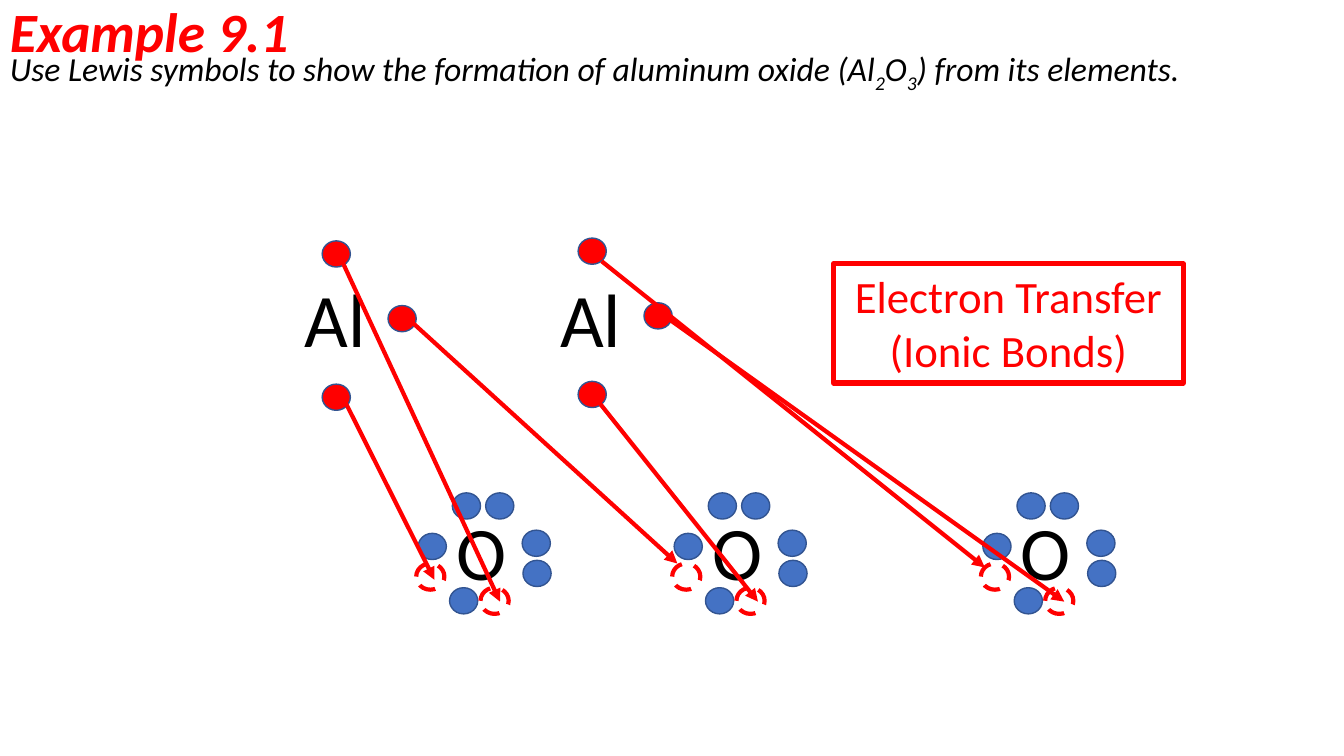
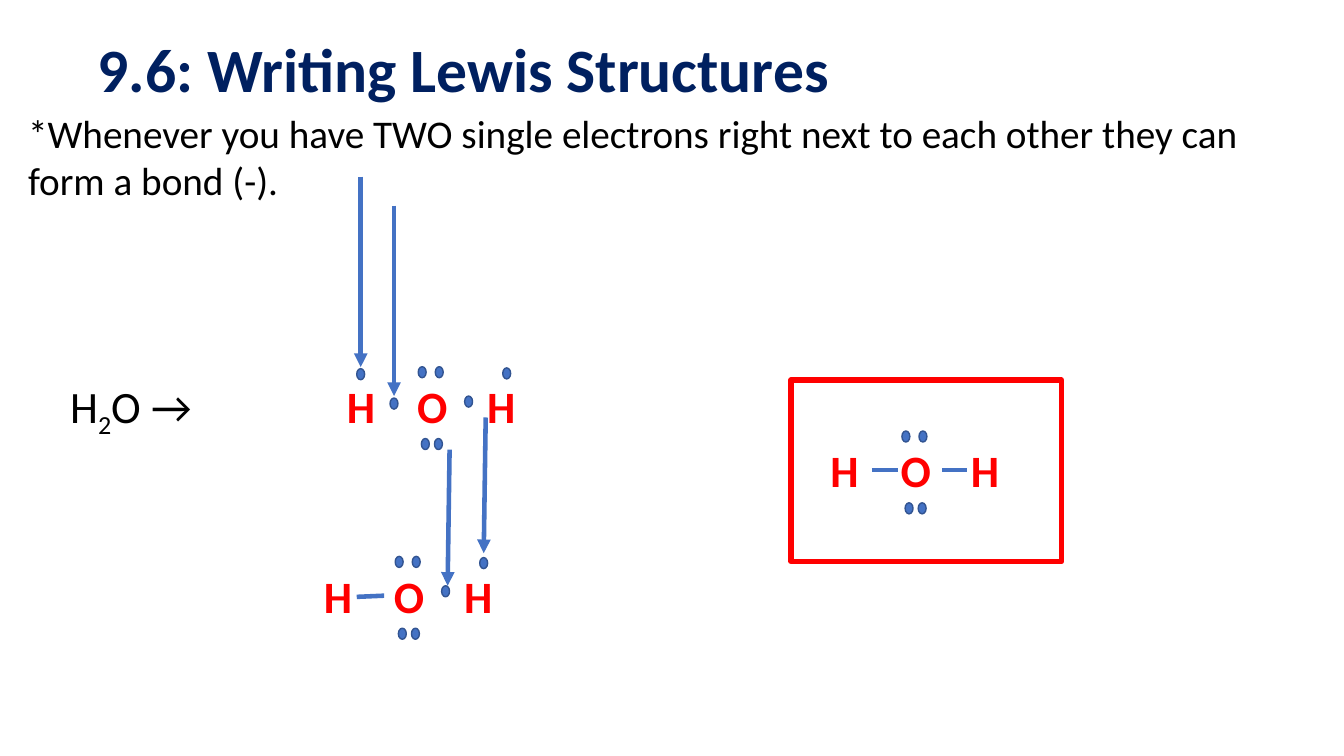
from typing import NamedTuple

from pptx import Presentation
from pptx.dml.color import RGBColor
from pptx.enum.dml import MSO_LINE as Dash
from pptx.enum.shapes import MSO_CONNECTOR as Link, MSO_SHAPE as Form
from pptx.enum.text import MSO_ANCHOR as Anchor, MSO_AUTO_SIZE as Fit, PP_ALIGN as Align
from pptx.oxml.ns import qn
from pptx.util import Cm, Pt

# Shared look
RED, BLUE, EDGE, NAVY, BLACK = "FF0000", "4472C4", "325491", "002060", "000000"
FACE = "Calibri"


class Box(NamedTuple):
    x: float
    y: float
    w: float
    h: float


class Style(NamedTuple):
    size: float
    hue: str = BLACK
    bold: bool = False
    slant: bool = False


class Spot(NamedTuple):
    x: float
    y: float


class Arrow(NamedTuple):
    start: Spot
    end: Spot


def paint(hue: str) -> RGBColor:
    return RGBColor.from_string(hue)


def place(box: Box) -> list:
    return [Cm(side) for side in box]


# Text: line feeds part paragraphs, underscores enclose subscripts
def fill_text(frame, text: str, style: Style, **layout) -> None:
    frame.word_wrap = True
    frame.auto_size = Fit.SHAPE_TO_FIT_TEXT
    form = {"name": FACE, "size": Pt(style.size), "bold": style.bold, "italic": style.slant}
    for row, line in enumerate(text.split("\n")):
        par = frame.paragraphs[0] if row == 0 else frame.add_paragraph()
        for key, value in layout.items():
            setattr(par, key, value)
        for part, words in enumerate(line.split("_")):
            run = par.add_run()
            run.text = words
            for key, value in form.items():
                setattr(run.font, key, value)
            run.font.color.rgb = paint(style.hue)
            if part % 2:
                run._r.get_or_add_rPr().set("baseline", "-25000")


def write(slide, box: Box, text: str, style: Style, **layout):
    frame = slide.shapes.add_textbox(*place(box)).text_frame
    fill_text(frame, text, style, **layout)
    return frame


def add_title(slide, box: Box, text: str, style: Style) -> None:
    frame = write(slide, box, text, style, line_spacing=0.9)
    frame.auto_size = Fit.NONE
    frame.vertical_anchor = Anchor.MIDDLE


# Shapes and lines
def draw(slide, form, box: Box, fill: str | None, edge: str, width: float, dash=None):
    shape = slide.shapes.add_shape(form, *place(box))
    shape.shadow.inherit = False
    if fill:
        shape.fill.solid()
        shape.fill.fore_color.rgb = paint(fill)
    else:
        shape.fill.background()
    shape.line.color.rgb = paint(edge)
    for key, value in {"width": Pt(width), "dash_style": dash}.items():
        setattr(shape.line, key, value)
    return shape


def add_dots(slide, base: Spot, spots: list[Spot], w: float, h: float, fill: str = BLUE) -> None:
    for spot in spots:
        box = Box(base.x + spot.x, base.y + spot.y, w, h)
        draw(slide, Form.OVAL, box, fill, EDGE, 1)


def add_lines(slide, lines: list[Arrow], hue: str, width: float, head: bool = True) -> None:
    for (start, end) in lines:
        link = slide.shapes.add_connector(
            Link.STRAIGHT, Cm(start.x), Cm(start.y), Cm(end.x), Cm(end.y))
        link.line.color.rgb = paint(hue)
        link.line.width = Pt(width)
        if head:
            stroke = link.line._get_or_add_ln()
            tip = stroke.makeelement(qn("a:tailEnd"), {"type": "triangle"})
            stroke.append(tip)
        props = link._element.spPr
        props.append(props.makeelement(qn("a:effectLst"), {}))


# Slide 1: electron transfer
DOT_W, DOT_H = 0.71, 0.66
METAL = [Spot(0.7, -0.66), Spot(0.7, 2.95), Spot(2.36, 0.97)]
OUTER = [Spot(0.15, -0.18), Spot(0.99, -0.18), Spot(1.91, 0.76),
         Spot(1.93, 1.52), Spot(-0.71, 0.84), Spot(0.08, 2.21)]
HOLES = [Spot(0.86, 2.21), Spot(-0.76, 1.6)]
MOVES = [
    Arrow(Spot(8.51, 9.75), Spot(10.95, 14.61)),
    Arrow(Spot(8.56, 6.45), Spot(12.6, 15.16)),
    Arrow(Spot(10.11, 7.87), Spot(17.07, 14.2)),
    Arrow(Spot(14.81, 9.78), Spot(19.1, 15.16)),
    Arrow(Spot(15.16, 6.58), Spot(24.82, 14.3)),
    Arrow(Spot(16.59, 7.85), Spot(26.82, 15.16)),
]


def add_atom(slide, base: Spot, sign: str) -> None:
    write(slide, Box(base.x, base.y, 2.13, 2.57), sign, Style(54))


def build_transfer(slide) -> None:
    add_title(slide, Box(0, -0.03, 29.21, 1.8), "Example 9.1",
              Style(39.6, RED, bold=True, slant=True))
    write(slide, Box(0, 1.09, 33.87, 1.27),
          "Use Lewis symbols to show the formation of aluminum oxide "
          "(Al_2_O_3_) from its elements.", Style(24, slant=True))
    for x, lift in ((7.42, 0), (13.87, 0.07)):
        add_atom(slide, Spot(x, 6.73), "Al")
        add_dots(slide, Spot(x, 6.73 - lift), METAL, DOT_W, DOT_H, RED)
    for x in (11.25, 17.7, 25.48):
        base = Spot(x, 12.6)
        add_dots(slide, base, OUTER, DOT_W, DOT_H)
        for hole in HOLES:
            box = Box(x + hole.x, base.y + hole.y, DOT_W, DOT_H)
            draw(slide, Form.OVAL, box, None, RED, 3, Dash.DASH)
        add_atom(slide, base, "O")
    label = draw(slide, Form.RECTANGLE, Box(21.01, 6.65, 8.81, 3), None, RED, 3.75)
    label.text_frame.vertical_anchor = Anchor.TOP
    fill_text(label.text_frame, "Electron Transfer\n(Ionic Bonds)",
              Style(32, RED), alignment=Align.CENTER)
    add_lines(slide, MOVES, RED, 3)


# Slide 2: water, from single electrons to bonds
STEP = 1.77
PAIRS = [Spot(0.28, -0.18), Spot(0.71, -0.18), Spot(0.36, 1.63), Spot(0.69, 1.63)]
LEFT = [Spot(-1.27, -0.13), Spot(-0.43, 0.61)]
RIGHT = [Spot(2.41, -0.15), Spot(1.45, 0.56)]
STAGES = [
    (Spot(10.26, 9.42), PAIRS + LEFT + RIGHT),
    (Spot(9.68, 14.2), PAIRS + RIGHT),
    (Spot(22.45, 11.04), PAIRS),
]
BONDS = [
    Arrow(Spot(8.99, 15.04), Spot(9.68, 15.01)),
    Arrow(Spot(21.97, 11.84), Spot(22.63, 11.84)),
    Arrow(Spot(23.75, 11.84), Spot(24.38, 11.84)),
]
HINTS = [
    Arrow(Spot(9.93, 5.18), Spot(9.93, 9.98)),
    Arrow(Spot(9.09, 4.45), Spot(9.09, 9.25)),
    Arrow(Spot(11.33, 11.33), Spot(11.28, 14.76)),
    Arrow(Spot(12.24, 10.52), Spot(12.19, 13.94)),
]


def build_water(slide) -> None:
    add_title(slide, Box(2.21, 0, 29.21, 3.68), "9.6: Writing Lewis Structures",
              Style(44, NAVY, bold=True))
    write(slide, Box(0.46, 2.62, 31.47, 2.64),
          "*Whenever you have TWO single electrons right next to each other "
          "they can form a bond (-).", Style(28))
    write(slide, Box(1.52, 9.42, 4.09, 1.63), "H_2_O →", Style(32))
    for base, dots in STAGES:
        for place_no, sign in enumerate("HOH", -1):
            box = Box(base.x + place_no * STEP, base.y, 1.45, 1.63)
            write(slide, box, sign, Style(32, RED, bold=True))
        add_dots(slide, base, dots, 0.2, 0.28)
    add_lines(slide, HINTS, BLUE, 3.25)
    add_lines(slide, BONDS, BLUE, 3.25, head=False)
    draw(slide, Form.RECTANGLE, Box(19.94, 9.58, 6.81, 4.57), None, RED, 4)


def main() -> None:
    deck = Presentation()
    deck.slide_width, deck.slide_height = Cm(33.87), Cm(19.05)
    for build in (build_transfer, build_water):
        build(deck.slides.add_slide(deck.slide_layouts[6]))
    deck.save("out.pptx")


if __name__ == "__main__":
    main()
